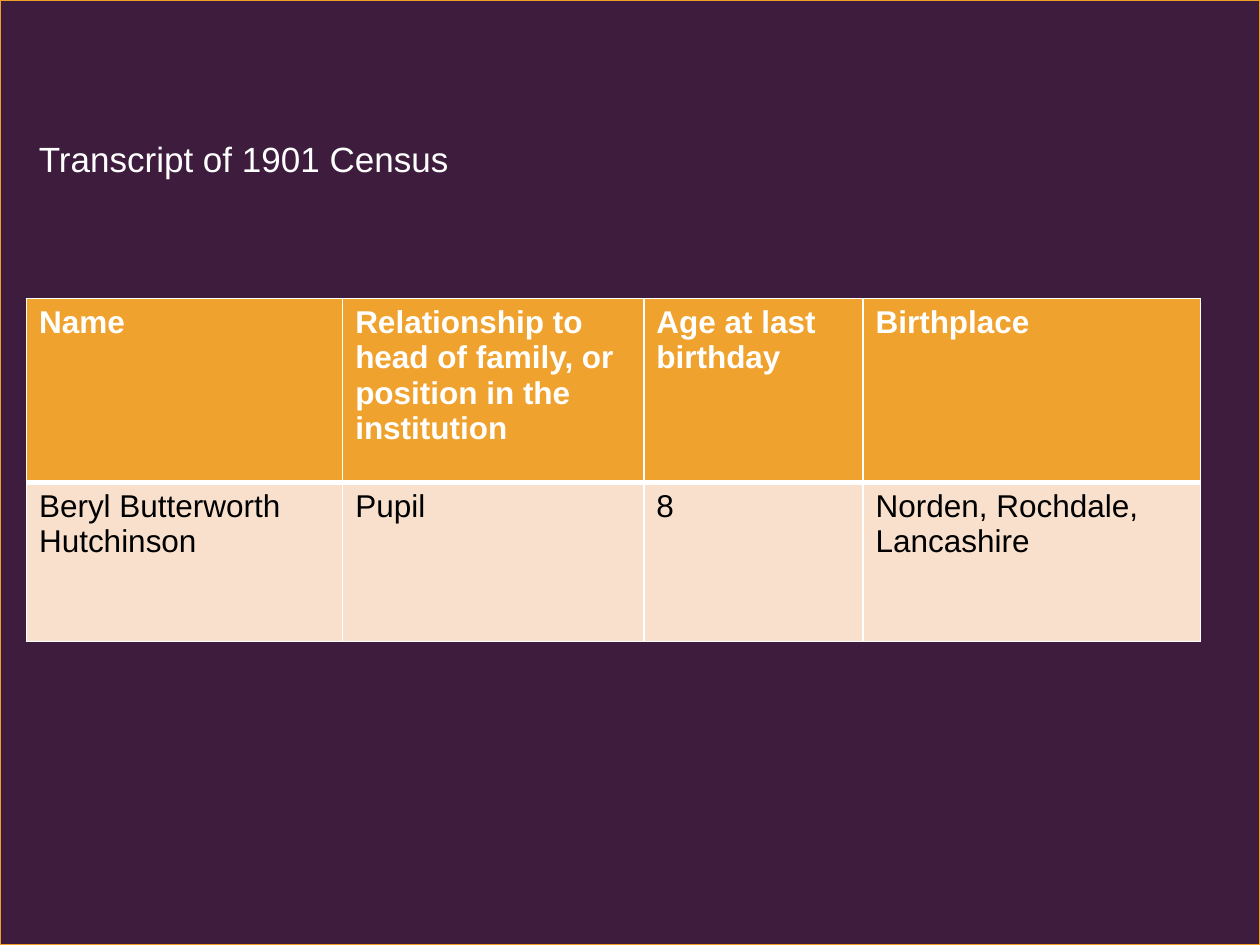
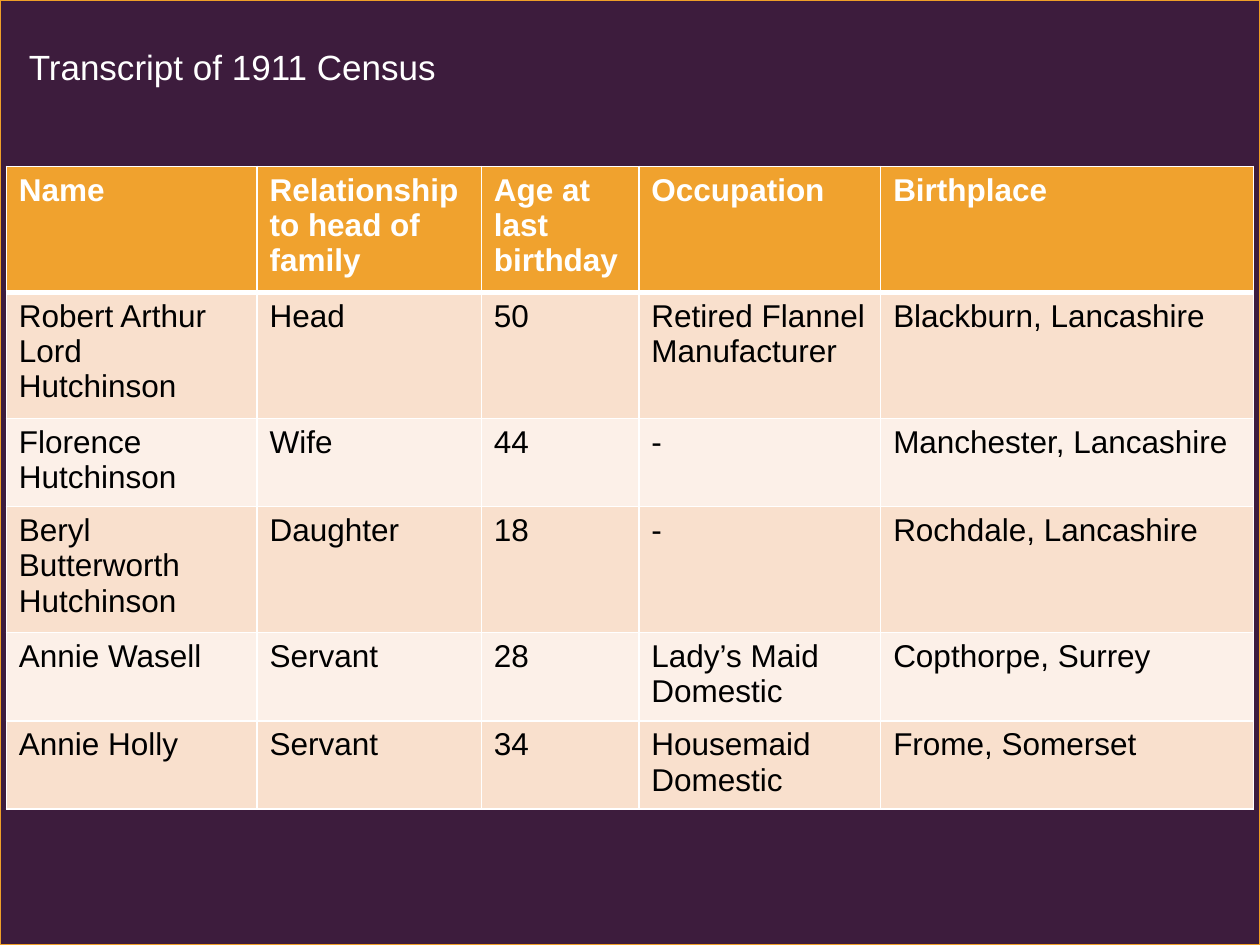
from lxml import etree
from pptx import Presentation, util as u
from pptx.dml.color import RGBColor
from pptx.enum import shapes, text
from pptx.oxml.ns import qn

W, H = 10, 7.5
FONT = "Arial"
COLORS = {
    "backdrop": "3D1C3D", "frame": "EF9F28", "header": "F0A22E",
    "odd": "F9E0CD", "even": "FCF0E8", "white": "FFFFFF", "black": "000000",
}
THIN, THICK = 1, 3

CENSUSES = [
    {
        "title": "Transcript of 1901 Census",
        "title_at": (0.21, 0.74),
        "table_at": (0.21, 2.37),
        "cols": [2.51, 2.39, 1.74, 2.68],
        "heights": [1.46, 1.26],
        "rows": [
            ("Name", "Relationship to head of family, or position in the institution",
             "Age at last birthday", "Birthplace"),
            ("Beryl Butterworth Hutchinson", "Pupil", "8", "Norden, Rochdale, Lancashire"),
        ],
    },
    {
        "title": "Transcript of 1911 Census",
        "title_at": (0.13, 0.01),
        "table_at": (0.05, 1.32),
        "cols": [1.99, 1.78, 1.25, 1.92, 2.96],
        "heights": [1, 1, 0.7, 1, 0.7, 0.7],
        "rows": [
            ("Name", "Relationship to head of family", "Age at last birthday",
             "Occupation", "Birthplace"),
            ("Robert Arthur Lord Hutchinson", "Head", "50",
             "Retired Flannel Manufacturer", "Blackburn, Lancashire"),
            ("Florence Hutchinson", "Wife", "44", "-", "Manchester, Lancashire"),
            ("Beryl Butterworth Hutchinson", "Daughter", "18", "-", "Rochdale, Lancashire"),
            ("Annie Wasell", "Servant", "28", "Lady’s Maid Domestic", "Copthorpe, Surrey"),
            ("Annie Holly", "Servant", "34", "Housemaid Domestic", "Frome, Somerset"),
        ],
    },
]


def color(name):
    return RGBColor.from_string(COLORS[name])


def style_text(tf, size, name, bold=False):
    for p in tf.paragraphs:
        for r in p.runs:
            r.font.name, r.font.size, r.font.bold = FONT, u.Pt(size), bold
            r.font.color.rgb = color(name)


def add_backdrop(s):
    sp = s.shapes.add_shape(shapes.MSO_SHAPE.RECTANGLE, 0, 0, u.Inches(W), u.Inches(H))
    sp.shadow.inherit = False
    sp.fill.solid()
    sp.fill.fore_color.rgb = color("backdrop")
    sp.line.color.rgb = color("frame")
    sp.line.width = u.Pt(0.75)


def add_title(s, title, at):
    left, top = map(u.Inches, at)
    tf = s.shapes.add_textbox(left, top, u.Inches(3.48), u.Inches(1.36)).text_frame
    tf.word_wrap = False
    tf.vertical_anchor = text.MSO_ANCHOR.TOP
    tf.margin_top = u.Inches(0.35)
    tf.text = title
    style_text(tf, 20, "white")


def set_borders(cell, top, bottom):
    tcPr = cell._tc.get_or_add_tcPr()
    for side, width in zip("LRTB", (THIN, THIN, top, bottom)):
        ln = etree.SubElement(tcPr, qn(f"a:ln{side}"), w=str(u.Pt(width)))
        fill = etree.SubElement(ln, qn("a:solidFill"))
        etree.SubElement(fill, qn("a:srgbClr"), val=COLORS["white"])


def add_table(s, rows, cols, heights, at):
    left, top = map(u.Inches, at)
    table = s.shapes.add_table(len(rows), len(cols), left, top,
                               u.Inches(sum(cols)), u.Inches(sum(heights))).table
    for column, width in zip(table.columns, cols):
        column.width = u.Inches(width)
    for i, (row, height, values) in enumerate(zip(table.rows, heights, rows)):
        row.height = u.Inches(height)
        is_header = i == 0
        band = "header" if is_header else ("even", "odd")[i % 2]
        for cell, value in zip(row.cells, values):
            set_borders(cell, THICK if i == 1 else THIN, THICK if is_header else THIN)
            cell.fill.solid()
            cell.fill.fore_color.rgb = color(band)
            cell.text_frame.text = value
            style_text(cell.text_frame, 18, "white" if is_header else "black", is_header)


def main():
    prs = Presentation()
    prs.slide_width, prs.slide_height = u.Inches(W), u.Inches(H)
    for census in CENSUSES:
        s = prs.slides.add_slide(prs.slide_layouts[6])
        add_backdrop(s)
        add_title(s, census["title"], census["title_at"])
        add_table(s, census["rows"], census["cols"], census["heights"], census["table_at"])
    prs.save("out.pptx")


if __name__ == "__main__":
    main()
